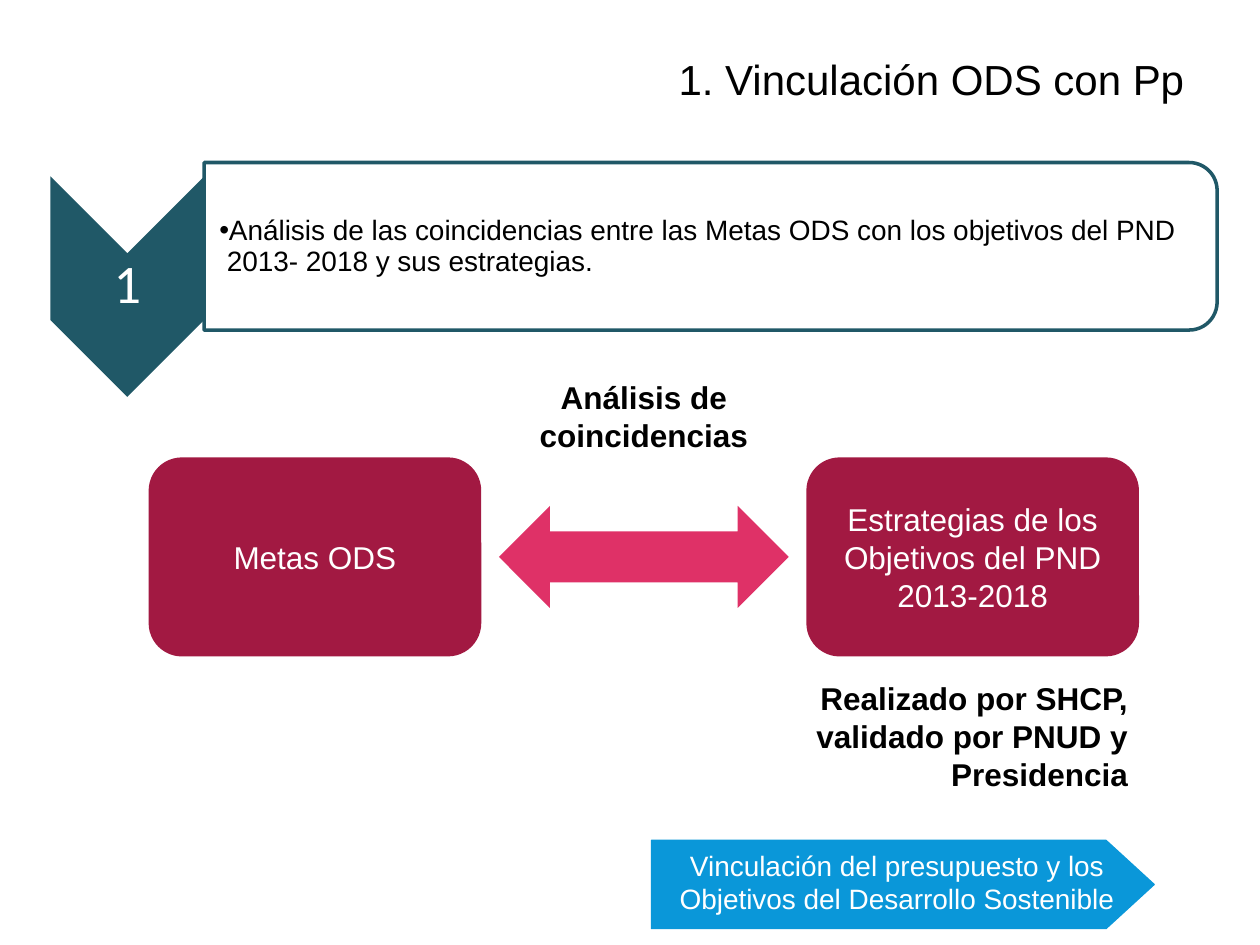
from dataclasses import dataclass

from lxml.etree import SubElement
from pptx import Presentation
from pptx.dml.color import RGBColor
from pptx.enum.shapes import MSO_SHAPE
from pptx.enum.text import MSO_ANCHOR, PP_ALIGN
from pptx.oxml.ns import qn
from pptx.util import Inches, Pt


@dataclass(frozen=True)
class Theme:
    ink: str = "000000"
    paper: str = "FFFFFF"
    step: str = "205867"
    card: str = "A21942"
    arrow: str = "DF3167"
    banner: str = "0A97D9"
    font: str = "Arial"
    number_font: str = "Calibri"
    title_size: int = 24
    number_size: int = 31
    card_size: int = 18
    body_size: int = 16


THEME = Theme()
STANDARD_INSETS = (0.1, 0.05, 0.1, 0.05)


def color(value):
    return RGBColor.from_string(value)


def write(holder, text, size, ink=THEME.ink, font=THEME.font, bold=False,
          align=PP_ALIGN.CENTER, anchor=MSO_ANCHOR.MIDDLE,
          insets=STANDARD_INSETS, spacing=None):
    frame = holder.text_frame
    frame.word_wrap = True
    frame.vertical_anchor = anchor
    (frame.margin_left, frame.margin_top,
     frame.margin_right, frame.margin_bottom) = map(Inches, insets)
    paragraph = frame.paragraphs[0]
    paragraph.alignment = align
    if spacing:
        paragraph.line_spacing = spacing
    run = paragraph.add_run()
    run.text = text
    run.font.size = Pt(size)
    run.font.name = font
    run.font.bold = bold
    run.font.color.rgb = color(ink)
    return paragraph


def add_block(shapes, preset, box, fill, line=None, width=1, adjustments=()):
    block = shapes.add_shape(preset, *map(Inches, box))
    block.shadow.inherit = False
    block.fill.solid()
    block.fill.fore_color.rgb = color(fill)
    if line:
        block.line.color.rgb = color(line)
        block.line.width = Pt(width)
    else:
        block.line.fill.background()
    for index, value in enumerate(adjustments):
        block.adjustments[index] = value
    return block


def add_turned_block(shapes, preset, box, fill, **style):
    left, top, width, height = box
    shift = (width - height) / 2
    block = add_block(shapes, preset, (left + shift, top - shift, height, width),
                      fill, **style)
    block.rotation = 90
    return block


def add_label(shapes, box, text, size, **style):
    label = shapes.add_textbox(*map(Inches, box))
    return write(label, text, size, **style)


def set_bullet(paragraph, margin, indent):
    properties = paragraph._p.get_or_add_pPr()
    properties.set("marL", str(Inches(margin)))
    properties.set("indent", str(Inches(indent)))
    bullet_color = SubElement(properties, qn("a:buClr"))
    SubElement(bullet_color, qn("a:srgbClr")).set("val", THEME.ink)
    SubElement(properties, qn("a:buFont")).set("typeface", THEME.font)
    SubElement(properties, qn("a:buChar")).set("char", "•")


def place_title(slide, box):
    title = slide.shapes.title
    title.left, title.top, title.width, title.height = map(Inches, box)
    write(title, "1. Vinculación ODS con Pp", THEME.title_size,
          align=PP_ALIGN.RIGHT, spacing=0.9)


def place_step(slide, box):
    left, top, width, height = box
    marker_width, panel_height = 1.22, 1.33
    panel_left, panel_width = left + marker_width, width - marker_width
    shapes = slide.shapes.add_group_shape().shapes

    add_turned_block(shapes, MSO_SHAPE.CHEVRON,
                     (left, top + 0.11, marker_width, height - 0.11),
                     THEME.step, adjustments=(0.5,))
    add_label(shapes, (left, top + 0.72, marker_width, 0.52), "1",
              THEME.number_size, ink=THEME.paper, font=THEME.number_font,
              insets=(0.02,) * 4, spacing=0.9)
    add_turned_block(shapes, MSO_SHAPE.ROUND_2_SAME_RECTANGLE,
                     (panel_left, top, panel_width, panel_height),
                     THEME.paper, line=THEME.step, width=2,
                     adjustments=(0.167, 0))
    description = add_label(
        shapes, (panel_left, top + 0.07, panel_width - 0.06, 1.2),
        "Análisis de las coincidencias entre las Metas ODS con los objetivos "
        "del PND 2013- 2018 y sus estrategias.",
        THEME.body_size, align=PP_ALIGN.LEFT,
        insets=(0.12, 0.01, 0.01, 0.01), spacing=0.9)
    description.level = 1
    set_bullet(description, 0.06, -0.11)


def place_comparison(slide, box):
    left, top, width, height = box
    card_width = 2.64
    arrow_width, arrow_height = 2.3, 0.81
    right_card = left + width - card_width
    shapes = slide.shapes

    for card_left, text in (
        (left, "Metas ODS"),
        (right_card, "Estrategias de los Objetivos del PND 2013-2018"),
    ):
        card = add_block(shapes, MSO_SHAPE.ROUNDED_RECTANGLE,
                         (card_left, top, card_width, height), THEME.card,
                         adjustments=(0.167,))
        write(card, text, THEME.card_size, ink=THEME.paper)

    add_block(shapes, MSO_SHAPE.LEFT_RIGHT_ARROW,
              (left + (width - arrow_width) / 2, top + (height - arrow_height) / 2,
               arrow_width, arrow_height),
              THEME.arrow, adjustments=(0.5, 0.5))
    add_label(shapes, (left + 2.49, top - 0.68, 2.88, 0.71),
              "Análisis de coincidencias", THEME.card_size, bold=True,
              anchor=MSO_ANCHOR.TOP)
    add_label(shapes, (left + 4.99, top + height + 0.13, 2.88, 1.01),
              "Realizado por SHCP, validado por PNUD y Presidencia",
              THEME.card_size, bold=True, align=PP_ALIGN.RIGHT,
              anchor=MSO_ANCHOR.TOP)


def place_banner(slide, box):
    banner = add_block(slide.shapes, MSO_SHAPE.PENTAGON, box, THEME.banner,
                       line=THEME.banner, width=0.75, adjustments=(0.545,))
    write(banner,
          "Vinculación del presupuesto y los Objetivos del Desarrollo Sostenible",
          THEME.body_size, ink=THEME.paper, insets=(0.1, 0.12, 0, 0.16))


def main():
    presentation = Presentation()
    presentation.slide_width = Inches(10)
    presentation.slide_height = Inches(7.5)
    slide = presentation.slides.add_slide(presentation.slide_layouts[5])
    place_banner(slide, (5.17, 6.67, 3.99, 0.7))
    place_title(slide, (0.5, 0.3, 9, 0.7))
    place_step(slide, (0.4, 1.29, 9.26, 1.86))
    place_comparison(slide, (1.18, 3.63, 7.86, 1.58))
    presentation.save("out.pptx")


if __name__ == "__main__":
    main()
